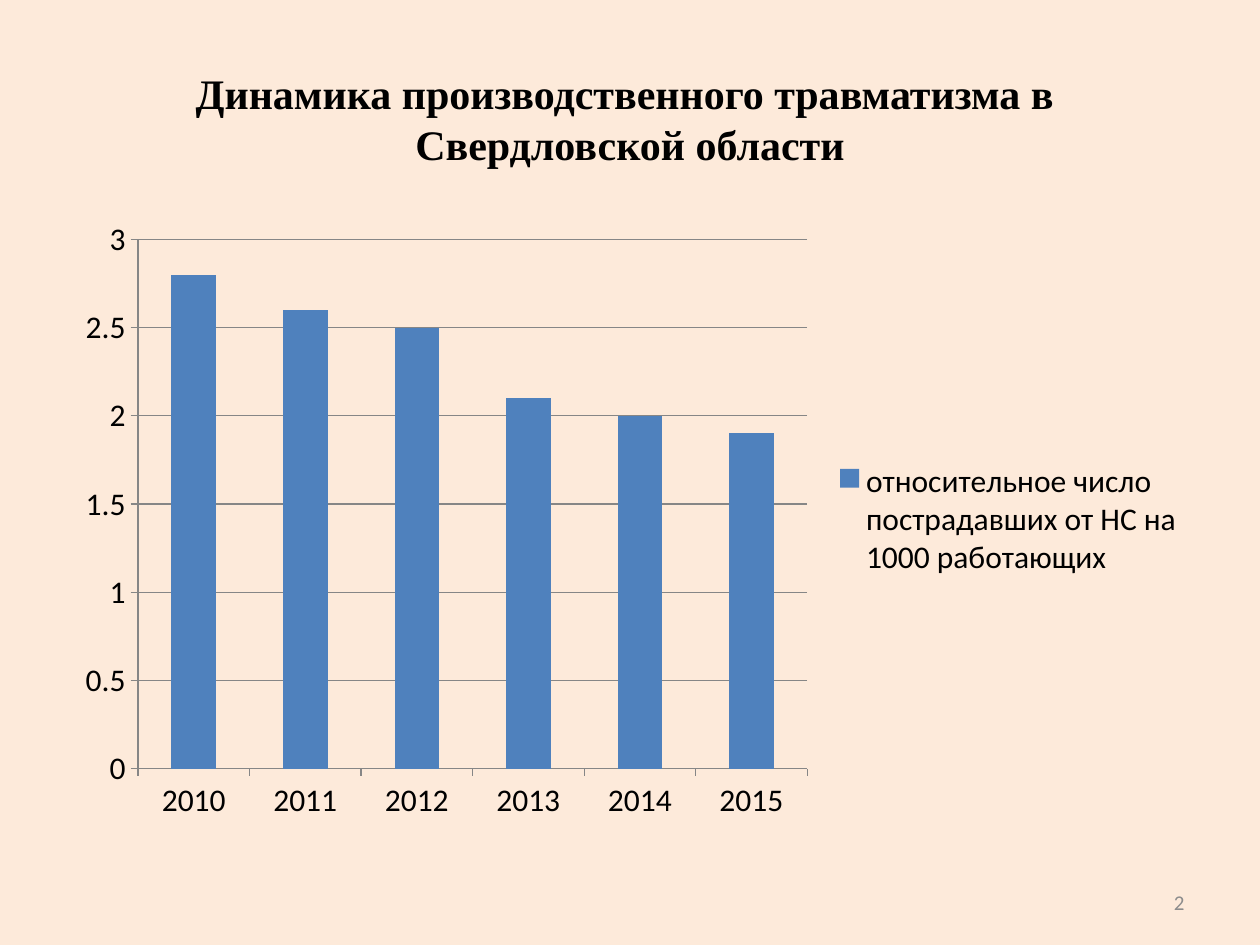
from pptx import Presentation
from pptx.chart.data import CategoryChartData
from pptx.dml.color import RGBColor
from pptx.enum.chart import XL_CHART_TYPE, XL_LEGEND_POSITION, XL_TICK_MARK
from pptx.enum.text import MSO_ANCHOR, PP_ALIGN
from pptx.util import Inches, Pt

COLUMN = XL_CHART_TYPE.COLUMN_CLUSTERED
RIGHT_KEY = XL_LEGEND_POSITION.RIGHT
OUTSIDE = XL_TICK_MARK.OUTSIDE
MIDDLE = MSO_ANCHOR.MIDDLE
CENTER, RIGHT = PP_ALIGN.CENTER, PP_ALIGN.RIGHT

CREAM = RGBColor(0xFD, 0xEA, 0xDA)
BLACK = RGBColor(0x00, 0x00, 0x00)
BLUE = RGBColor(0x4F, 0x81, 0xBD)
GRAY = RGBColor(0x8C, 0x8C, 0x8C)
RULE = RGBColor(0x86, 0x86, 0x86)

WIDTH, HEIGHT = Inches(10), Inches(7.5)
YEARS = [str(year) for year in range(2010, 2016)]
RATES = [2.8, 2.6, 2.5, 2.1, 2, 1.9]


def write(frame, text, font="Calibri", size=18, color=BLACK, bold=False,
          align=CENTER):
    """Fill a text frame; a vertical tab in the text breaks the line."""
    frame.word_wrap = True
    frame.vertical_anchor = MIDDLE
    line = frame.paragraphs[0]
    line.text = text
    line.alignment = align
    for run in line.runs:
        run.font.name = font
        run.font.size = Pt(size)
        run.font.bold = bold
        run.font.color.rgb = color


class Page:
    """Holds the slide and its style; boxes are shares of the slide's size."""

    def __init__(self, slide, back):
        self.slide = slide
        fill = slide.background.fill
        fill.solid()
        fill.fore_color.rgb = back

    def place(self, box):
        left, top, wide, high = box
        return (int(left * WIDTH), int(top * HEIGHT),
                int(wide * WIDTH), int(high * HEIGHT))

    def text(self, box, text, **style):
        shape = self.slide.shapes.add_textbox(*self.place(box))
        write(shape.text_frame, text, **style)

    def chart(self, box, name, cats, values):
        data = CategoryChartData()
        data.categories = cats
        data.add_series(name, values)
        chart = self.slide.shapes.add_chart(
            COLUMN, *self.place(box), data).chart
        chart.has_title = False
        chart.font.name = "Calibri"
        chart.font.size = Pt(18)
        chart.font.color.rgb = BLACK

        chart.has_legend = True
        chart.legend.position = RIGHT_KEY
        chart.legend.include_in_layout = False

        plot = chart.plots[0]
        plot.gap_width = 150
        plot.vary_by_categories = False
        fill = plot.series[0].format.fill
        fill.solid()
        fill.fore_color.rgb = BLUE

        scale = chart.value_axis
        scale.has_major_gridlines = True
        scale.minimum_scale, scale.maximum_scale = 0, 3
        scale.major_unit = 0.5
        for axis in (chart.category_axis, scale):
            axis.major_tick_mark = OUTSIDE
        for part in (chart.category_axis, scale, scale.major_gridlines):
            part.format.line.color.rgb = RULE
            part.format.line.width = Pt(0.75)


def main():
    deck = Presentation()
    deck.slide_width, deck.slide_height = WIDTH, HEIGHT
    page = Page(deck.slides.add_slide(deck.slide_layouts[6]), CREAM)
    page.text((0.05, 0.04, 0.9, 0.17),
              "Динамика производственного травматизма в \vСвердловской области",
              font="Times New Roman", size=24, bold=True)
    page.chart((0.05, 0.22, 0.9, 0.66),
               "относительное число пострадавших от НС на 1000 работающих",
               YEARS, RATES)
    page.text((0.72, 0.93, 0.23, 0.05), "2", size=12, color=GRAY, align=RIGHT)
    deck.save("out.pptx")


if __name__ == "__main__":
    main()
